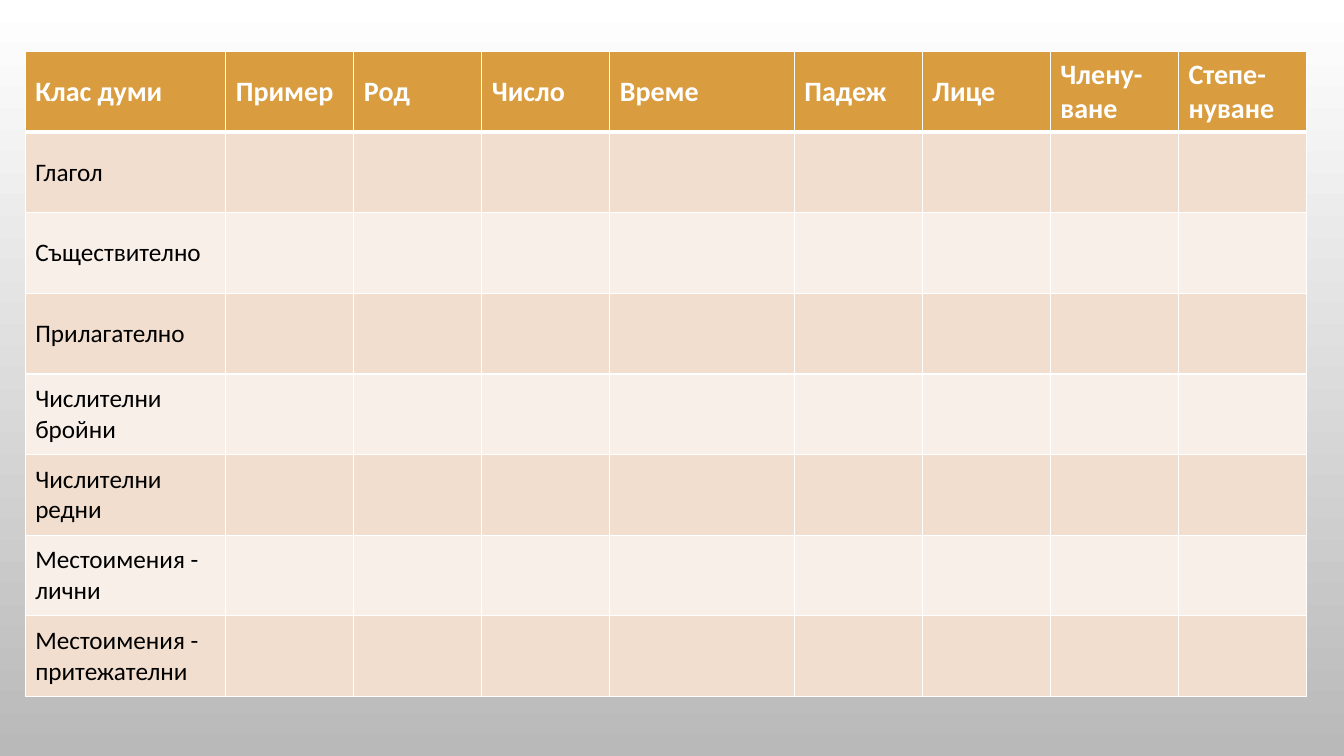
from lxml import etree
from pptx import Presentation, util as u
from pptx.dml.color import RGBColor
from pptx.enum import text
from pptx.oxml import ns


def paint(fill, tone):
    fill.solid()
    fill.fore_color.rgb = RGBColor.from_string(tone)


def edge(cell, side, width):
    props = cell._tc.get_or_add_tcPr()
    line = etree.SubElement(props, ns.qn("a:ln" + side), w=str(u.Pt(width)))
    solid = etree.SubElement(line, ns.qn("a:solidFill"))
    etree.SubElement(solid, ns.qn("a:srgbClr"), val="FFFFFF")


heads = ["Клас думи", "Пример", "Род", "Число", "Време", "Падеж", "Лице",
         "Члену-ване", "Степе-нуване"]
kinds = ["Глагол", "Съществително", "Прилагателно", "Числителни бройни",
         "Числителни редни", "Местоимения - лични",
         "Местоимения - притежателни"]
wide = {0: 1.99, 4: 1.83}
sizes = [wide.get(col, 1.27) for col in range(len(heads))]
high = 0.8

# Slide
deck = Presentation()
deck.slide_width, deck.slide_height = u.Inches(13.33), u.Inches(7.5)
slide = deck.slides.add_slide(deck.slide_layouts[6])

# Background: white at the top to grey at the bottom
back = slide.background.fill
back.gradient()
back.gradient_angle = 270
for stop, tone in zip(back.gradient_stops, ["FFFFFF", "B9B9B9"]):
    stop.color.rgb = RGBColor.from_string(tone)

# Table grid
rows = [heads] + [[kind] + [""] * (len(heads) - 1) for kind in kinds]
frame = slide.shapes.add_table(
    len(rows), len(heads), u.Inches(0.25), u.Inches(0.51),
    u.Inches(sum(sizes)), u.Inches(high * len(rows)))
table = frame.table
for col, size in zip(table.columns, sizes):
    col.width = u.Inches(size)
for row in table.rows:
    row.height = u.Inches(high)

# Cells: heading row, then banded rows
for r, words in enumerate(rows):
    head = r == 0
    tone = "D99C3F" if head else ("F8EFE8", "F1DECF")[r % 2]
    for c, word in enumerate(words):
        cell = table.cell(r, c)
        for side in "LRTB":
            thick = (r, side) in [(0, "B"), (1, "T")]
            edge(cell, side, 3 if thick else 1)
        paint(cell.fill, tone)
        cell.vertical_anchor = text.MSO_ANCHOR.MIDDLE
        if word:
            run = cell.text_frame.paragraphs[0].add_run()
            run.text = word
            run.font.name = "Calibri"
            run.font.size = u.Pt(20 if head else 18)
            run.font.bold = head
            paint(run.font.fill, "FFFFFF" if head else "000000")

deck.save("out.pptx")
